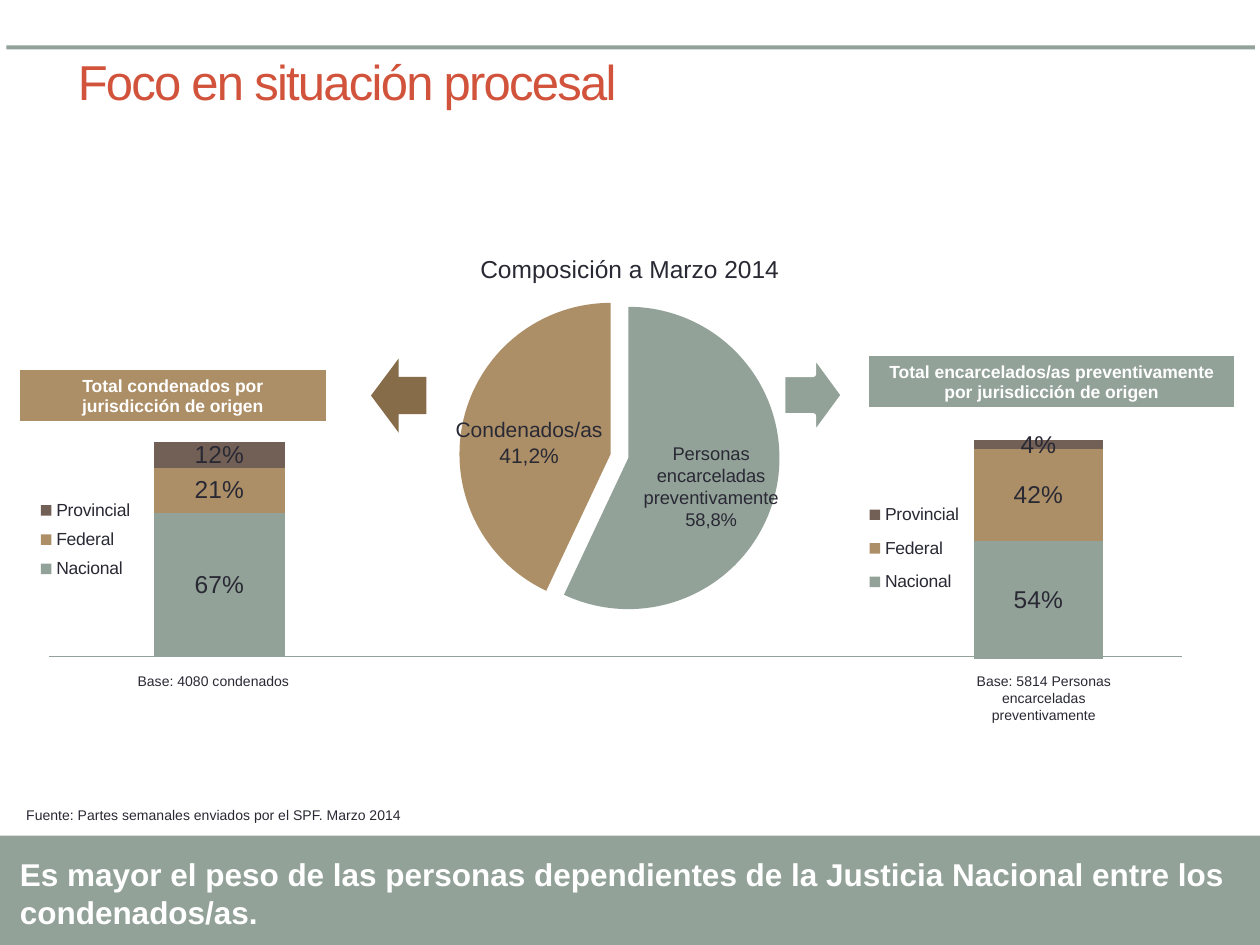
from dataclasses import dataclass

from lxml import etree
from pptx import Presentation
from pptx.chart.data import CategoryChartData
from pptx.dml.color import RGBColor
from pptx.enum.chart import XL_CHART_TYPE, XL_LABEL_POSITION, XL_LEGEND_POSITION
from pptx.enum.shapes import MSO_CONNECTOR, MSO_SHAPE
from pptx.enum.text import MSO_ANCHOR, PP_ALIGN
from pptx.oxml.ns import qn
from pptx.util import Pt

PIE = XL_CHART_TYPE.PIE
STACKED = XL_CHART_TYPE.COLUMN_STACKED_100
LABEL_CENTER = XL_LABEL_POSITION.CENTER
LEGEND_RIGHT = XL_LEGEND_POSITION.RIGHT
STRAIGHT = MSO_CONNECTOR.STRAIGHT
RECTANGLE = MSO_SHAPE.RECTANGLE
DOWN_ARROW = MSO_SHAPE.DOWN_ARROW
MIDDLE = MSO_ANCHOR.MIDDLE
LEFT, CENTER = PP_ALIGN.LEFT, PP_ALIGN.CENTER


@dataclass(frozen=True)
class Theme:
    font: str = "Arial"
    ink: RGBColor = RGBColor(0x29, 0x29, 0x34)
    sage: RGBColor = RGBColor(0x93, 0xA2, 0x99)
    tan: RGBColor = RGBColor(0xAD, 0x8F, 0x67)
    brown: RGBColor = RGBColor(0x86, 0x6C, 0x49)
    umber: RGBColor = RGBColor(0x72, 0x60, 0x56)
    red: RGBColor = RGBColor(0xD2, 0x53, 0x3C)
    white: RGBColor = RGBColor(0xFF, 0xFF, 0xFF)
    title: float = 28
    message: float = 18
    heading: float = 14
    slice: float = 12
    small_slice: float = 10.5
    label: float = 10
    note: float = 8


theme = Theme()


def add_text(text, box, size, color=theme.ink, align=CENTER, bold=False, wrap=True):
    shape = slide.shapes.add_textbox(*map(Pt, box))
    shape.text_frame.word_wrap = wrap
    shape.text_frame.text = text
    paragraph = shape.text_frame.paragraphs[0]
    paragraph.alignment = align
    font = paragraph.runs[0].font
    font.name, font.size, font.bold = theme.font, Pt(size), bold
    font.color.rgb = color
    return shape


def set_layout(parent, index, box, inner=False):
    for old in parent.findall(qn("c:layout")):
        parent.remove(old)
    layout = etree.Element(qn("c:layout"))
    manual = etree.SubElement(layout, qn("c:manualLayout"))
    settings = [("layoutTarget", "inner")] if inner else []
    settings += [("xMode", "edge"), ("yMode", "edge"), *zip("xywh", box)]
    for tag, value in settings:
        etree.SubElement(manual, qn(f"c:{tag}")).set("val", str(value))
    parent.insert(index, layout)


presentation = Presentation()
presentation.slide_width, presentation.slide_height = Pt(720), Pt(540)
slide = presentation.slides.add_slide(presentation.slide_layouts[6])

for box in [(3.6, 26, 713.5, 2.2), (0, 477.5, 720, 66)]:
    bar = slide.shapes.add_shape(RECTANGLE, *map(Pt, box))
    bar.shadow.inherit = False
    bar.fill.solid()
    bar.fill.fore_color.rgb = theme.sage
    bar.line.fill.background()

pie_data = CategoryChartData()
pie_data.categories = ["1", "2"]
pie_data.add_series("Series 1", (57, 43))
pie = slide.shapes.add_chart(PIE, Pt(203.8), Pt(136), Pt(345.6), Pt(260), pie_data).chart
pie.has_title = pie.has_legend = False
pie.font.name, pie.font.size = theme.font, Pt(theme.message)
pie.font.color.rgb = theme.ink
pie_plot = pie.plots[0]
pie_plot.vary_by_categories = False
for index, color in enumerate((theme.sage, theme.tan)):
    fill = pie_plot.series[0].points[index].format.fill
    fill.solid()
    fill.fore_color.rgb = color
point = pie_plot.series[0]._element.find(qn("c:dPt"))
explosion = etree.Element(qn("c:explosion"), val="12")
point.find(qn("c:spPr")).addprevious(explosion)
plot_area = pie._chartSpace.chart.plotArea
set_layout(plot_area, 0, (0.17, 0.14, 0.5, 0.67), inner=True)

columns = [
    ((13, 247.7, 231.8, 164), (67, 21, 12), 0.75, (0.02, 0.2, 0.27, 0.34)),
    ((482.4, 246.2, 229, 153.4), (54, 42, 4), 0.82, (0.04, 0.22, 0.27, 0.43)),
]
jurisdictions = [("Nacional", theme.sage), ("Federal", theme.tan), ("Provincial", theme.umber)]
for box, values, plot_height, legend_box in columns:
    data = CategoryChartData(number_format='0"%"')
    data.categories = ["1"]
    for (name, color), value in zip(jurisdictions, values):
        data.add_series(name, [value])
    chart = slide.shapes.add_chart(STACKED, *map(Pt, box), data).chart
    chart.has_title = False
    chart.font.name, chart.font.size = theme.font, Pt(theme.heading)
    chart.font.color.rgb = theme.ink
    chart.category_axis.visible = chart.value_axis.visible = False
    chart.value_axis.has_major_gridlines = False
    plot = chart.plots[0]
    plot.vary_by_categories = False
    plot.gap_width, plot.overlap = 202, 100
    for series, (name, color) in zip(plot.series, jurisdictions):
        series.format.fill.solid()
        series.format.fill.fore_color.rgb = color
        labels = series.data_labels
        labels.show_value = True
        labels.position = LABEL_CENTER
        labels.number_format, labels.number_format_is_linked = '0"%"', False
        labels.font.name, labels.font.size = theme.font, Pt(theme.heading)
        labels.font.color.rgb = theme.ink
    chart.has_legend = True
    legend = chart.legend
    legend.position, legend.include_in_layout = LEGEND_RIGHT, False
    legend.font.name, legend.font.size = theme.font, Pt(theme.label)
    legend.font.color.rgb = theme.ink
    set_layout(legend._element, 1, legend_box)
    plot_area = chart._chartSpace.chart.plotArea
    set_layout(plot_area, 0, (0, 0.03, 0.97, plot_height), inner=True)

arrows = [
    ((206.6, 210.2, 42.5, 31.7), 90, theme.brown, None),
    ((440.6, 208.1, 48.2, 35.3), 270, theme.sage, theme.white),
]
for box, rotation, color, outline in arrows:
    arrow = slide.shapes.add_shape(DOWN_ARROW, *map(Pt, box))
    arrow.shadow.inherit = False
    arrow.rotation = rotation
    arrow.fill.solid()
    arrow.fill.fore_color.rgb = color
    if outline:
        arrow.line.color.rgb = outline
        arrow.line.width = Pt(3.5)
    else:
        arrow.line.fill.background()

headers = [
    ("Total condenados por jurisdicción de origen", (10.8, 211, 175.7, 31), theme.tan),
    ("Total encarcelados/as preventivamente por jurisdicción de origen",
     (496.1, 203, 209.5, 31), theme.sage),
]
for text, box, color in headers:
    table = slide.shapes.add_table(1, 1, *map(Pt, box)).table
    cell = table.cell(0, 0)
    cell.text_frame.text = text
    cell.vertical_anchor = MIDDLE
    paragraph = cell.text_frame.paragraphs[0]
    paragraph.alignment = CENTER
    font = paragraph.runs[0].font
    font.name, font.size, font.bold = theme.font, Pt(theme.label), True
    font.color.rgb = theme.white
    properties = cell._tc.get_or_add_tcPr()
    for side, width in (("L", 1), ("R", 1), ("T", 1), ("B", 3)):
        border = etree.SubElement(properties, qn(f"a:ln{side}"), w=str(Pt(width)))
        border_fill = etree.SubElement(border, qn("a:solidFill"))
        etree.SubElement(border_fill, qn("a:srgbClr"), val=str(theme.white))
    cell.fill.solid()
    cell.fill.fore_color.rgb = color

baseline = slide.shapes.add_connector(STRAIGHT, Pt(28), Pt(375.2), Pt(675.4), Pt(375.2))
baseline.line.color.rgb = theme.sage
baseline.line.width = Pt(0.75)
etree.SubElement(baseline._element.spPr, qn("a:effectLst"))

add_text("Condenados/as 41,2%", (252, 234.7, 100.8, 36), theme.slice)
add_text("Personas encarceladas preventivamente 58,8%", (356.4, 249.1, 100, 58.3),
         theme.small_slice)
add_text("Base: 5814 Personas encarceladas preventivamente", (535.7, 380.9, 121.7, 36), theme.note)
add_text("Base: 4080 condenados", (65.5, 380.9, 113, 17.3), theme.note)
add_text("Composición a Marzo 2014", (244, 141.8, 231.8, 24.5), theme.heading)
add_text("Es mayor el peso de las personas dependientes de la Justicia Nacional entre los "
         "condenados/as.", (4.3, 485.3, 720, 51), theme.message, theme.white, LEFT, bold=True)
add_text("Fuente: Partes semanales enviados por el SPF. Marzo 2014", (7.9, 457.2, 232.6, 17.3),
         theme.note, align=LEFT, wrap=False)
title = add_text("Foco en situación procesal", (37.4, 1.4, 648, 90), theme.title, theme.red, LEFT)
title.text_frame.vertical_anchor = MIDDLE
title.text_frame.paragraphs[0].runs[0].font._element.set("spc", "-100")

presentation.save("out.pptx")
